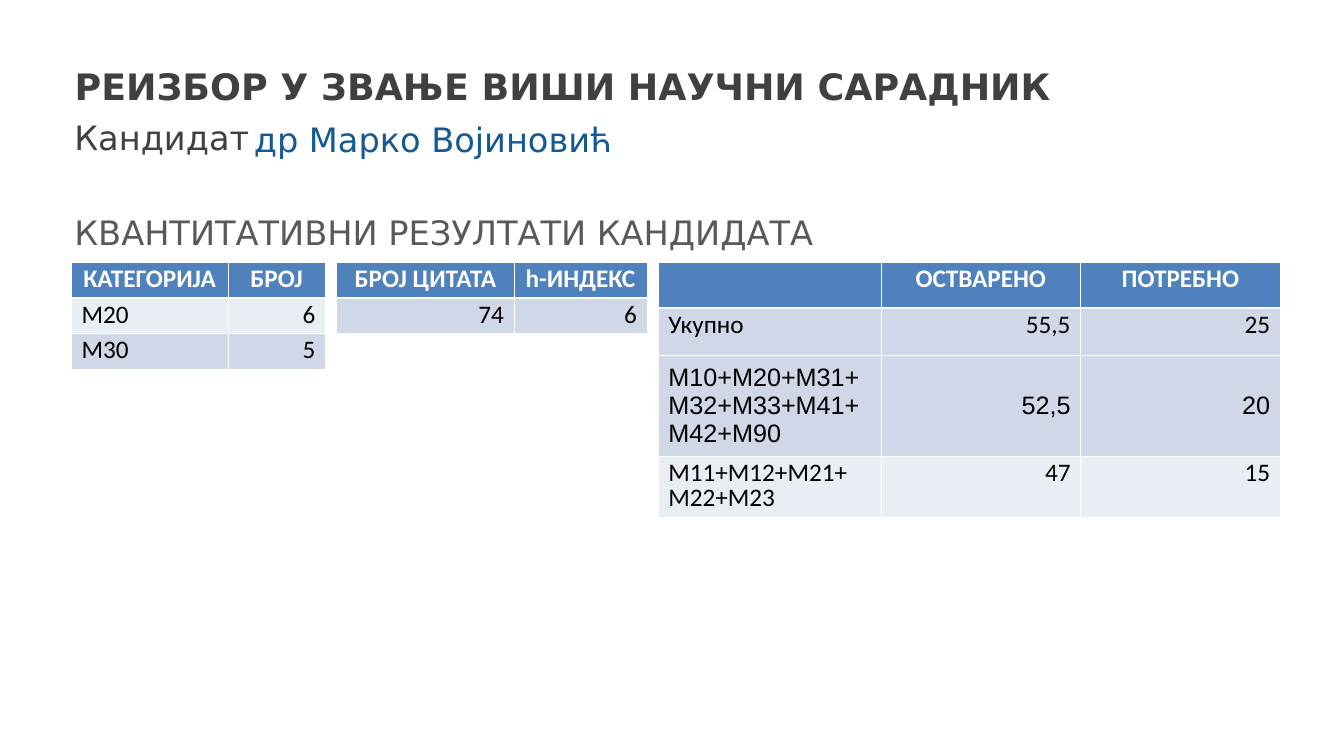
from dataclasses import dataclass

from lxml.etree import SubElement
from pptx import Presentation
from pptx.dml.color import RGBColor
from pptx.enum.text import MSO_ANCHOR as Anchor, MSO_AUTO_SIZE as AutoSize, PP_ALIGN as Align
from pptx.oxml.ns import qn
from pptx.util import Pt


@dataclass(frozen=True)
class Theme:
    heading: str = "404040"
    subheading: str = "595959"
    accent: str = "145991"
    header: str = "4F81BD"
    dark_band: str = "D0D8E8"
    light_band: str = "E9EDF4"
    white: str = "FFFFFF"
    black: str = "000000"
    heading_font: str = "DejaVu Sans"
    table_font: str = "Calibri"
    formula_font: str = "Arial"
    title_size: int = 26
    text_size: int = 24
    table_size: int = 18
    thin_line: float = 0.45
    thick_line: float = 1.47


THEME = Theme()
LEFT, WIDTH = 46.1, 868.3
TABLE_TOP = 187.2
ROW_HEIGHT = 25.2


def add_span(para, text, font, size, color, bold=False):
    span = para.add_run()
    span.text = text
    span.font.name = font
    span.font.size = Pt(size)
    span.font.bold = bold
    span.font.color.rgb = RGBColor.from_string(color)


def format_heading(box, place, text, color, anchor, size=THEME.text_size, bold=False):
    box.left, box.top, box.width, box.height = map(Pt, place)
    frame = box.text_frame
    frame.word_wrap = True
    frame.auto_size = AutoSize.NONE
    frame.vertical_anchor = anchor
    para = frame.paragraphs[0]
    para.alignment = Align.LEFT
    add_span(para, text, THEME.heading_font, size, color, bold)
    return para


def add_heading(page, place, text, color, anchor):
    box = page.shapes.add_textbox(*map(Pt, place))
    return format_heading(box, place, text, color, anchor)


def set_borders(cell, top, bottom):
    properties = cell._tc.get_or_add_tcPr()
    widths = {"lnL": THEME.thin_line, "lnR": THEME.thin_line, "lnT": top, "lnB": bottom}
    for side, width in widths.items():
        line = SubElement(properties, qn(f"a:{side}"), w=str(Pt(width)))
        fill = SubElement(line, qn("a:solidFill"))
        SubElement(fill, qn("a:srgbClr"), val=THEME.white)


def fill_cell(cell, text, color, is_header, align, is_formula):
    # Borders come before the fill in the cell properties
    thin, thick = THEME.thin_line, THEME.thick_line
    set_borders(cell, thin, thick if is_header else thin)
    cell.fill.solid()
    cell.fill.fore_color.rgb = RGBColor.from_string(color)
    para = cell.text_frame.paragraphs[0]
    para.alignment = align
    if is_formula:
        cell.vertical_anchor = Anchor.MIDDLE
    else:
        para.line_spacing = 0.83
    if text:
        font = THEME.formula_font if is_formula else THEME.table_font
        ink = THEME.white if is_header else THEME.black
        add_span(para, text, font, THEME.table_size, ink, is_header)


def add_results(page, left, widths, heights, rows, bands, label_column=True, formula_row=None):
    frame = page.shapes.add_table(len(rows), len(widths), Pt(left), Pt(TABLE_TOP),
                                  Pt(sum(widths)), Pt(sum(heights)))
    table = frame.table
    table.horz_banding = False
    for column, width in zip(table.columns, widths):
        column.width = Pt(width)
    for row, height in zip(table.rows, heights):
        row.height = Pt(height)
    for r, (texts, color) in enumerate(zip(rows, [THEME.header, *bands])):
        for c, text in enumerate(texts):
            if r == 0:
                align = Align.CENTER
            else:
                align = Align.LEFT if label_column and c == 0 else Align.RIGHT
            fill_cell(table.cell(r, c), text, color, r == 0, align, r == formula_row)


def main():
    deck = Presentation()
    deck.slide_width, deck.slide_height = Pt(960), Pt(540)
    page = deck.slides.add_slide(deck.slide_layouts[5])
    dark, light = THEME.dark_band, THEME.light_band

    # Headings
    format_heading(page.shapes.title, (LEFT, 38.9, WIDTH, 41.8),
                   "РЕИЗБОР У ЗВАЊЕ ВИШИ НАУЧНИ САРАДНИК", THEME.heading,
                   Anchor.BOTTOM, THEME.title_size, True)
    add_heading(page, (LEFT, 79.9, WIDTH, 36), "Кандидат", THEME.heading, Anchor.TOP)
    name = add_heading(page, (174.2, 80.6, 486, 34.6), "др Марко Војиновић",
                       THEME.accent, Anchor.MIDDLE)
    name.line_spacing = 1.1
    add_heading(page, (LEFT, 141.8, WIDTH, 41.8), "КВАНТИТАТИВНИ РЕЗУЛТАТИ КАНДИДАТА",
                THEME.subheading, Anchor.BOTTOM)

    # Points achieved and required
    add_results(page, 470.2, (159.1, 142.6, 142.6), (33.1, 33.8, 71.5, 43.2), [
        ("", "ОСТВАРЕНО", "ПОТРЕБНО"),
        ("Укупно", "55,5", "25"),
        ("M10+M20+M31+M32+M33+M41+M42+M90", "52,5", "20"),
        ("М11+М12+М21+ M22+M23", "47", "15"),
    ], (dark, dark, light), formula_row=2)

    # Papers by category
    add_results(page, 51.1, (111.6, 69.8), [ROW_HEIGHT] * 3, [
        ("КАТЕГОРИЈА", "БРОЈ"),
        ("М20", "6"),
        ("М30", "5"),
    ], (light, dark))

    # Citations
    add_results(page, 240.5, (126.7, 95), [ROW_HEIGHT] * 2, [
        ("БРОЈ ЦИТАТА", "h-ИНДЕКС"),
        ("74", "6"),
    ], (dark,), label_column=False)

    deck.save("out.pptx")


if __name__ == "__main__":
    main()
